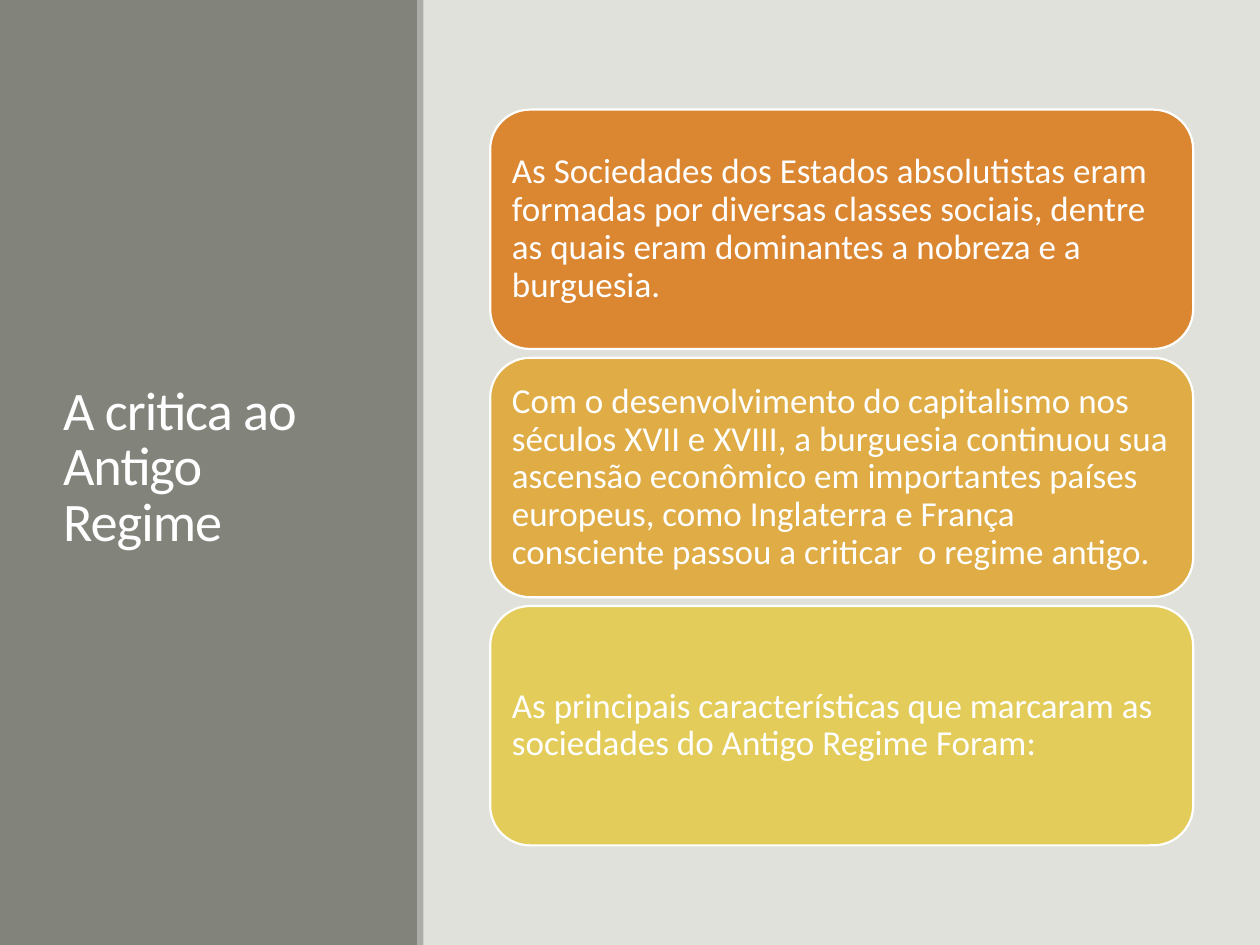
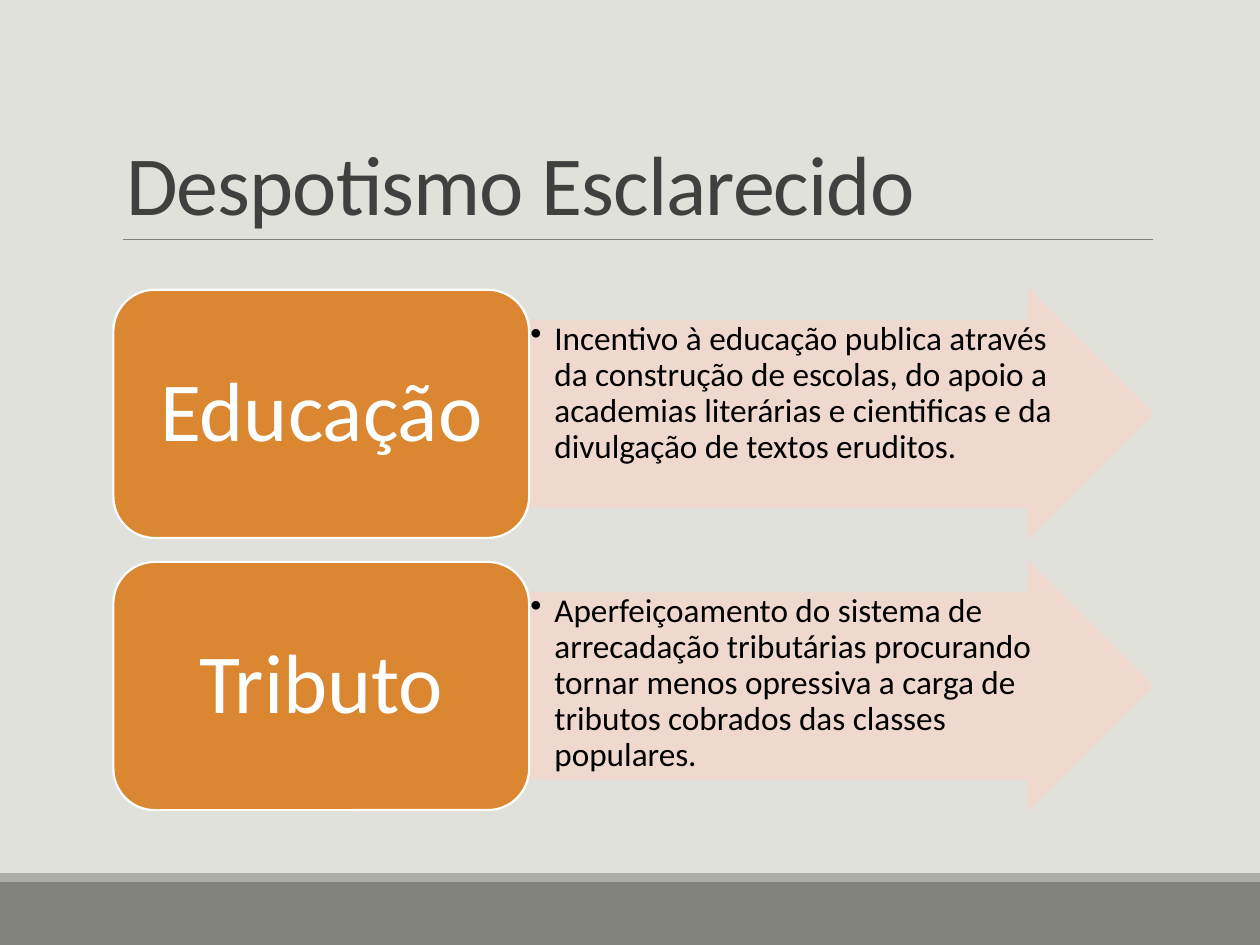
"""Builds two slides on the critique of the Ancien Régime and enlightened despotism."""
from dataclasses import dataclass

from lxml import etree
from pptx import Presentation
from pptx.dml import color
from pptx.enum import shapes, text
from pptx.oxml import ns
from pptx.util import Inches, Pt


@dataclass(frozen=True)
class Theme:
    font: str = "Calibri"
    page: str = "E1E1DB"
    band: str = "82847C"
    edge: str = "ACADA8"
    rule: str = "808080"
    heading: str = "404040"
    light: str = "FFFFFF"
    dark: str = "000000"
    orange: str = "DB8631"
    amber: str = "DFAC45"
    yellow: str = "E3CC5A"
    blush: str = "F1D9CE"
    display: int = 48
    side_title: int = 31
    body: int = 20
    detail: int = 19
    outline: float = 1.25
    hairline: float = 0.5


def rgb(value):
    return color.RGBColor.from_string(value)


def put(obj, values):
    for name, value in values.items():
        setattr(obj, name, value)


class Deck:
    def __init__(self, theme):
        self.theme = theme
        self.prs = Presentation()
        put(self.prs, {"slide_width": Inches(10), "slide_height": Inches(7.5)})
        self.paint(self.prs.slide_master.background.fill, theme.page)
        self.s = None

    def paint(self, fill, value, opacity=None):
        fill.solid()
        fill.fore_color.rgb = rgb(value)
        if opacity:
            clr = fill._xPr.find(".//" + ns.qn("a:srgbClr"))
            etree.SubElement(clr, ns.qn("a:alpha"), val=str(opacity * 1000))

    def slide(self):
        self.s = self.prs.slides.add_slide(self.prs.slide_layouts[5])

    def label(self, sp, words, size, ink, anchor=text.MSO_ANCHOR.MIDDLE,
              align=text.PP_ALIGN.LEFT, spacing=0.9, inset=(0.1, 0.05)):
        tf = sp.text_frame
        x, y = map(Inches, inset)
        put(tf, {"word_wrap": True, "auto_size": text.MSO_AUTO_SIZE.NONE,
                 "vertical_anchor": anchor, "margin_left": x, "margin_right": x,
                 "margin_top": y, "margin_bottom": y})
        p = tf.paragraphs[0]
        put(p, {"alignment": align, "line_spacing": spacing})
        r = p.add_run()
        r.text = words
        put(r.font, {"name": self.theme.font, "size": Pt(size)})
        r.font.color.rgb = rgb(ink)
        return p

    def title(self, words, box, size, ink, anchor):
        sp = self.s.shapes.title
        put(sp, dict(zip(("left", "top", "width", "height"), map(Inches, box))))
        p = self.label(sp, words, size, ink, anchor, spacing=0.85)
        p.runs[0]._r.get_or_add_rPr().set("spc", "-50")
        self.s.shapes._spTree.append(sp._element)

    def shape(self, kind, box, fill, line=None, opacity=None):
        sp = self.s.shapes.add_shape(kind, *map(Inches, box))
        sp.shadow.inherit = False
        self.paint(sp.fill, fill, opacity)
        if line:
            sp.line.width = Pt(self.theme.outline)
            self.paint(sp.line.fill, line, opacity)
        else:
            sp.line.fill.background()
        return sp

    def band(self, *box, fill):
        self.shape(shapes.MSO_SHAPE.RECTANGLE, box, fill)

    def card(self, words, box, fill, size, **style):
        sp = self.shape(shapes.MSO_SHAPE.ROUNDED_RECTANGLE, box, fill, self.theme.light)
        self.label(sp, words, size, self.theme.light, **style)

    def arrow(self, words, box):
        t = self.theme
        sp = self.shape(shapes.MSO_SHAPE.RIGHT_ARROW, box, t.blush, t.blush, 90)
        sp.adjustments[0], sp.adjustments[1] = 0.75, 0.5
        p = self.label(sp, words, t.detail, t.dark, text.MSO_ANCHOR.TOP, inset=(0.01, 0.01))
        pPr = p._p.get_or_add_pPr()
        indent = Inches(0.19)
        pPr.set("marL", str(indent))
        pPr.set("indent", str(-indent))
        etree.SubElement(pPr, ns.qn("a:buChar"), char="•")

    def rule(self, left, right, top):
        ends = map(Inches, (left, top, right, top))
        line = self.s.shapes.add_connector(shapes.MSO_CONNECTOR.STRAIGHT, *ends)
        line.line.width = Pt(self.theme.hairline)
        line.line.color.rgb = rgb(self.theme.rule)
        etree.SubElement(line._element.spPr, ns.qn("a:effectLst"))


def critique(deck):
    t = deck.theme
    deck.slide()
    deck.band(0, 0, 3.32, 7.5, fill=t.band)
    deck.band(3.31, 0, 0.05, 7.5, fill=t.edge)
    deck.title("A critica ao Antigo Regime", (0.4, 0.57, 2.53, 6.31),
               t.side_title, t.light, text.MSO_ANCHOR.MIDDLE)
    cards = [
        (t.orange, "As Sociedades dos Estados absolutistas eram formadas por diversas "
                   "classes sociais, dentre as quais eram dominantes a nobreza e a burguesia."),
        (t.amber, "Com o desenvolvimento do capitalismo nos séculos XVII e XVIII, a burguesia "
                  "continuou sua ascensão econômico em importantes países europeus, como "
                  "Inglaterra e França consciente passou a criticar  o regime antigo."),
        (t.yellow, "As principais características que marcaram as sociedades do Antigo "
                   "Regime Foram:"),
    ]
    for i, (fill, words) in enumerate(cards):
        deck.card(words, (3.89, 0.87 + i * 1.97, 5.58, 1.9), fill, t.body, inset=(0.08, 0.08))


def despotism(deck):
    t = deck.theme
    deck.slide()
    deck.band(0, 7, 10, 0.5, fill=t.band)
    deck.band(0, 6.93, 10, 0.07, fill=t.edge)
    deck.rule(0.98, 9.15, 1.9)
    deck.title("Despotismo Esclarecido", (0.9, 0.31, 8.25, 1.59),
               t.display, t.heading, text.MSO_ANCHOR.BOTTOM)
    reforms = [
        ("Educação", "Incentivo à educação publica através da construção de escolas, do apoio a "
                     "academias literárias e cientificas e da divulgação de textos eruditos."),
        ("Tributo", "Aperfeiçoamento do sistema de arrecadação tributárias procurando tornar "
                    "menos opressiva a carga de tributos cobrados das classes populares."),
    ]
    for i, (name, words) in enumerate(reforms):
        top = 2.3 + i * 2.16
        deck.arrow(words, (4.2, top, 4.95, 1.97))
        deck.card(name, (0.9, top, 3.3, 1.97), t.orange, t.display,
                  align=text.PP_ALIGN.CENTER, inset=(0.2, 0.1))


def main():
    deck = Deck(Theme())
    critique(deck)
    despotism(deck)
    deck.prs.save("out.pptx")


if __name__ == "__main__":
    main()
